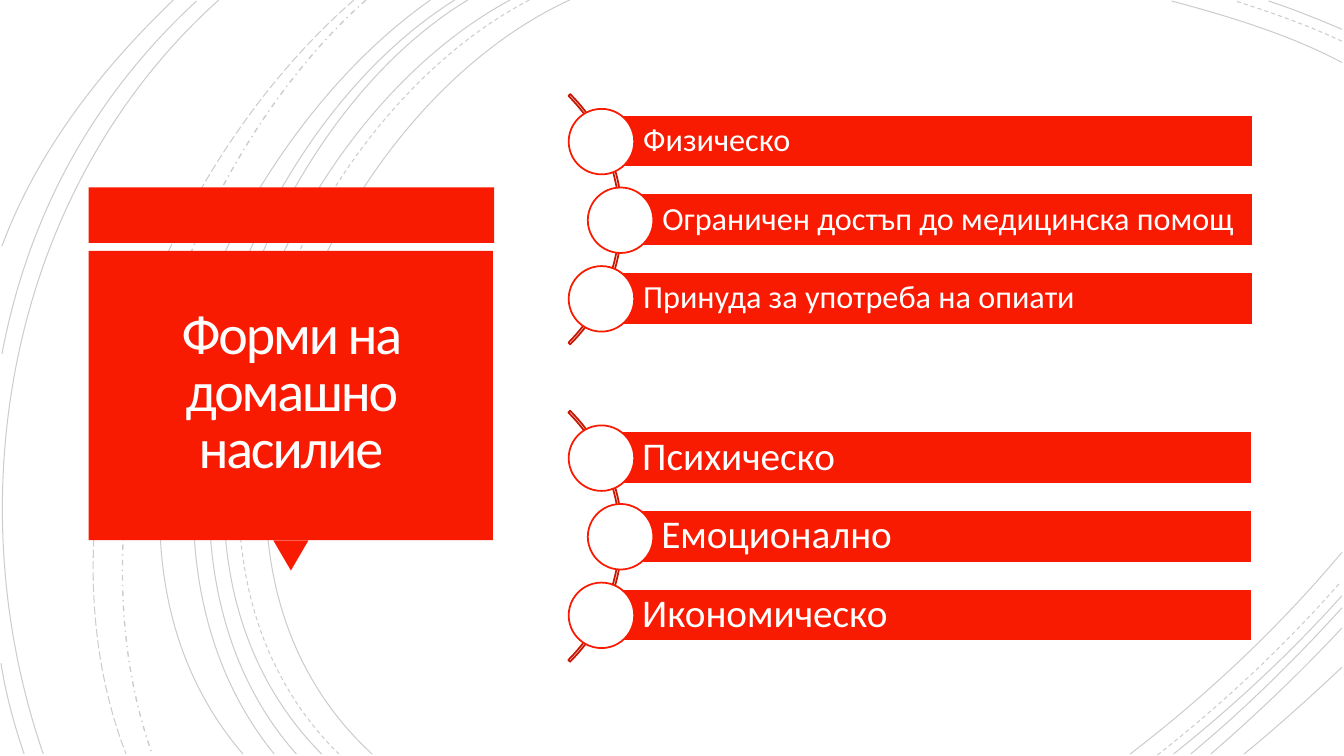
from lxml.etree import SubElement
from pptx import Presentation
from pptx.dml.color import RGBColor
from pptx.enum.dml import MSO_LINE
from pptx.enum.shapes import MSO_SHAPE
from pptx.enum.text import MSO_ANCHOR, PP_ALIGN
from pptx.oxml.ns import qn
from pptx.util import Pt

PX = 9144  # 100 px to the inch
COLORS = {
    "red": "F81B02",
    "dark red": "C71602",
    "white": "FFFFFF",
    "title": "FFFEFF",
    "black": "000000",
}

deck = Presentation()
deck.slide_width, deck.slide_height = 1333 * PX, 750 * PX
slide = deck.slides.add_slide(deck.slide_layouts[6])


def add_block(kind, box, fill=None, line=None):
    block = slide.shapes.add_shape(kind, *[length * PX for length in box])
    block.shadow.inherit = False
    if fill:
        block.fill.solid()
        block.fill.fore_color.rgb = RGBColor.from_string(COLORS[fill])
    else:
        block.fill.background()
    if line:
        block.line.color.rgb = RGBColor.from_string(COLORS[line])
        block.line.width = Pt(1.25)
    else:
        block.line.fill.background()
    return block


def write_text(holder, text, size, color="white", align=PP_ALIGN.LEFT,
               leading=0.9, inset=10, left_inset=10, tracking=None):
    frame = holder.text_frame
    frame.word_wrap = True
    frame.vertical_anchor = MSO_ANCHOR.MIDDLE
    frame.margin_left = left_inset * PX
    frame.margin_top = frame.margin_right = frame.margin_bottom = inset * PX
    paragraph = frame.paragraphs[0]
    paragraph.alignment = align
    paragraph.line_spacing = leading
    run = paragraph.add_run()
    run.text = text
    run.font.name = "Calibri"
    run.font.size = Pt(size)
    run.font.color.rgb = RGBColor.from_string(COLORS[color])
    if tracking:
        run.font._element.set("spc", str(tracking))


# Background arcs: start, two control points, end
SOLID, DASH = MSO_LINE.SOLID, MSO_LINE.DASH
background_arcs = [
    (SOLID, (565, 0), (315, 115), (143, 540), (369, 748)),
    (SOLID, (1331, 62), (1278, 34), (1218, 16), (1162, 1)),
    (SOLID, (1121, 748), (1197, 690), (1269, 622), (1331, 548)),
    (DASH, (525, 0), (285, 125), (123, 537), (336, 748)),
    (DASH, (1331, 41), (1297, 25), (1260, 12), (1225, 1)),
    (DASH, (1148, 749), (1213, 698), (1275, 640), (1330, 577)),
    (SOLID, (506, 0), (270, 127), (110, 537), (319, 748)),
    (SOLID, (1331, 29), (1307, 19), (1283, 9), (1258, 1)),
    (SOLID, (1164, 748), (1223, 701), (1280, 648), (1331, 591)),
    (SOLID, (464, 0), (244, 133), (110, 541), (294, 748)),
    (SOLID, (1181, 748), (1234, 704), (1284, 655), (1331, 603)),
    (SOLID, (451, 0), (231, 138), (97, 533), (272, 748)),
    (SOLID, (1201, 748), (1246, 709), (1290, 667), (1331, 623)),
    (SOLID, (427, 0), (217, 147), (53, 529), (241, 748)),
    (SOLID, (1234, 748), (1267, 721), (1299, 692), (1331, 662)),
    (MSO_LINE.DASH_DOT, (363, 0), (176, 166), (65, 509), (151, 748)),
    (MSO_LINE.LONG_DASH, (351, 0), (157, 169), (29, 499), (125, 748)),
    (SOLID, (217, 0), (11, 185), (-46, 490), (43, 748)),
    (SOLID, (195, 1), (92, 96), (28, 214), (2, 351)),
    (SOLID, (1, 658), (6, 689), (14, 719), (24, 748)),
    (SOLID, (172, 0), (100, 69), (37, 150), (2, 244)),
]
for dash, start, *bend in background_arcs:
    builder = slide.shapes.build_freeform(*start, scale=PX)
    builder.add_line_segments(bend, close=False)
    arc = builder.convert_to_shape()
    arc.shadow.inherit = False
    arc.fill.background()
    arc.line.color.rgb = RGBColor.from_string(COLORS["black"])
    arc.line.width = Pt(1 if dash == MSO_LINE.DASH_DOT else 0.75)
    arc.line.dash_style = dash
    ink = arc.line._ln.find(".//" + qn("a:srgbClr"))
    SubElement(ink, qn("a:alpha"), val="20000")
    # Join the three straight segments into one Bézier curve
    outline = arc.element.find(".//" + qn("a:path"))
    segments = outline.findall(qn("a:lnTo"))
    curve = SubElement(outline, qn("a:cubicBezTo"))
    for segment in segments:
        curve.append(segment[0])
        outline.remove(segment)

# Title panel
add_block(MSO_SHAPE.RECTANGLE, (88, 186, 402, 55), "red")
pointer = add_block(MSO_SHAPE.ISOSCELES_TRIANGLE, (271, 536, 35, 30), "red")
pointer.rotation = 180
add_block(MSO_SHAPE.RECTANGLE, (88, 249, 401, 287), "red")
title = slide.shapes.add_textbox(97 * PX, 256 * PX, 383 * PX, 270 * PX)
write_text(title, "Форми на домашно насилие", 40, color="title",
           align=PP_ALIGN.CENTER, leading=0.85, tracking=-150)

# Two curved lists: arc box, left and top of first bar, text size, inset, items
ROW_STEP, BAR_HEIGHT, CIRCLE = 78, 52, 65
curved_lists = [
    ((266, 42, 351, 351), 597, 114, 23, 6,
     ["Физическо", "Ограничен достъп до медицинска помощ",
      "Принуда за употреба на опиати"]),
    ((265, 356, 352, 352), 596, 428, 28, 8,
     ["Психическо", "Емоционално", "Икономическо"]),
]
for spine_box, list_left, list_top, size, inset, items in curved_lists:
    spine = add_block(MSO_SHAPE.BLOCK_ARC, spine_box, line="dark red")
    for index, value in enumerate((189, 27, 0.007)):
        spine.adjustments[index] = value
    for row, item in enumerate(items):
        indent = 19 if row == 1 else 0
        top = list_top + row * ROW_STEP
        bar = add_block(MSO_SHAPE.RECTANGLE,
                        (list_left + indent, top, 646 - indent, BAR_HEIGHT),
                        "red", "white")
        write_text(bar, item, size, inset=inset, left_inset=41)
        add_block(MSO_SHAPE.OVAL, (564 + indent, top - 6, CIRCLE, CIRCLE),
                  "white", "red")

deck.save("out.pptx")
